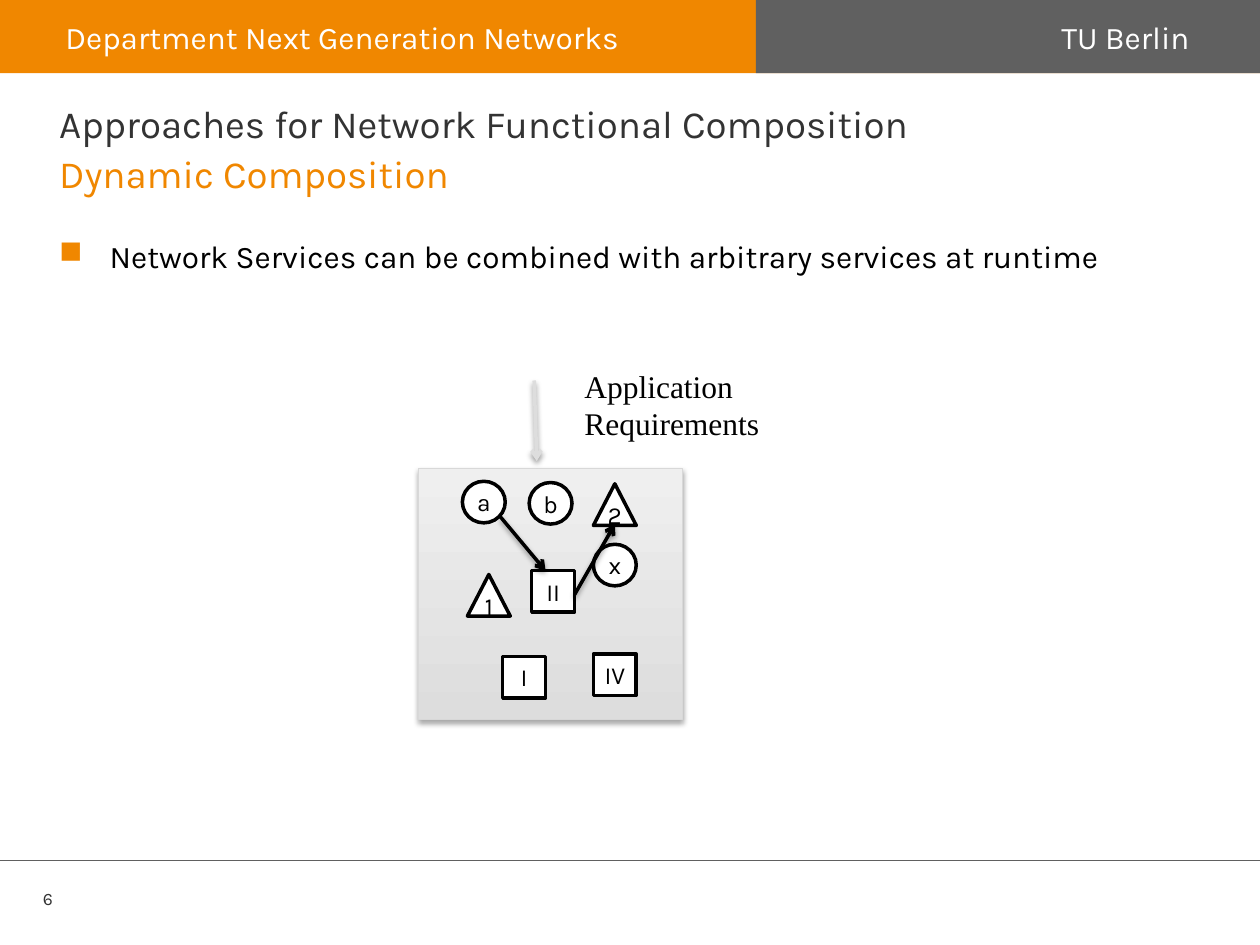
from lxml import etree
from pptx import Presentation
from pptx.dml.color import RGBColor
from pptx.enum.shapes import MSO_CONNECTOR, MSO_SHAPE
from pptx.enum.text import MSO_ANCHOR, MSO_AUTO_SIZE, PP_ALIGN
from pptx.oxml.ns import qn
from pptx.util import Inches, Pt

ORANGE = RGBColor(0xF0, 0x87, 0x00)
GREY = RGBColor(0x60, 0x60, 0x60)
DARK = RGBColor(0x33, 0x33, 0x33)
BLACK = RGBColor(0, 0, 0)
WHITE = RGBColor(0xFF, 0xFF, 0xFF)
PANEL_LOW = RGBColor(0xDD, 0xDD, 0xDD)
PANEL_HIGH = RGBColor(0xEF, 0xEF, 0xEF)
PANEL_EDGE = RGBColor(0xD8, 0xD8, 0xD8)

RECT = MSO_SHAPE.RECTANGLE
CIRCLE = MSO_SHAPE.OVAL
TRIANGLE = MSO_SHAPE.ISOSCELES_TRIANGLE
STRAIGHT = MSO_CONNECTOR.STRAIGHT
TOP, MIDDLE = MSO_ANCHOR.TOP, MSO_ANCHOR.MIDDLE
LEFT, CENTER, RIGHT = PP_ALIGN.LEFT, PP_ALIGN.CENTER, PP_ALIGN.RIGHT
NO_FIT = MSO_AUTO_SIZE.NONE

FONT = "Karla"
TEXT_LEFT, TEXT_WIDTH = 0.47, 9.06
SERVICE_SIZE = (0.34, 0.33)
SERVICES = [
    ("a", CIRCLE, 3.67, 3.82),
    ("x", CIRCLE, 4.71, 4.32),
    ("1", TRIANGLE, 3.71, 4.56),
    ("I", RECT, 3.99, 5.21),
    ("b", CIRCLE, 4.2, 3.83),
    ("II", RECT, 4.22, 4.53),
    ("2", TRIANGLE, 4.71, 3.84),
    ("IV", RECT, 4.71, 5.19),
]


def inches(*lengths):
    return [Inches(length) for length in lengths]


def write(frame, text, size=18, color=BLACK, font=FONT, align=LEFT,
          anchor=TOP, insets=(0.1, 0.05, 0.1, 0.05), bullet=None):
    """Fill a text frame with one formatted paragraph; insets run left, top, right, bottom."""
    frame.word_wrap = True
    frame.auto_size = NO_FIT
    frame.vertical_anchor = anchor
    (frame.margin_left, frame.margin_top,
     frame.margin_right, frame.margin_bottom) = inches(*insets)
    frame.text = text
    paragraph = frame.paragraphs[0]
    paragraph.alignment = align
    if bullet:
        add_bullet(paragraph, bullet)
    run_font = paragraph.runs[0].font
    run_font.name, run_font.size = font, Pt(size)
    run_font.color.rgb = color


def add_bullet(paragraph, symbol, indent=0.4):
    properties = paragraph._p.get_or_add_pPr()
    properties.set("marL", str(Inches(indent)))
    properties.set("indent", str(-Inches(indent)))
    color = etree.SubElement(properties, qn("a:buClr"))
    etree.SubElement(color, qn("a:srgbClr"), val=str(ORANGE))
    etree.SubElement(properties, qn("a:buChar"), char=symbol)


def add_text(slide, text, left, top, width, height, **text_format):
    box = slide.shapes.add_textbox(*inches(left, top, width, height))
    write(box.text_frame, text, **text_format)


def add_block(slide, preset, left, top, width, height, fill=None, line=None, weight=1):
    block = slide.shapes.add_shape(preset, *inches(left, top, width, height))
    block.shadow.inherit = False
    if fill is not None:
        block.fill.solid()
        block.fill.fore_color.rgb = fill
    if line is None:
        block.line.fill.background()
    else:
        block.line.color.rgb = line
        block.line.width = Pt(weight)
    return block


def add_line(slide, start, end, color, weight):
    line = slide.shapes.add_connector(STRAIGHT, *inches(*start, *end))
    line.line.color.rgb = color
    line.line.width = Pt(weight)
    effects = etree.SubElement(line._element.spPr, qn("a:effectLst"))
    return line, effects


def add_arrow(slide, start, end, color=BLACK):
    arrow, effects = add_line(slide, start, end, color, 2)
    etree.SubElement(arrow.line._get_or_add_ln(), qn("a:tailEnd"), type="arrow")
    add_drop_shadow(effects, opacity=38, distance=1.6)


def add_drop_shadow(effects, opacity, distance, blur=3.1):
    shadow = etree.SubElement(
        effects, qn("a:outerShdw"), blurRad=str(Pt(blur)), dist=str(Pt(distance)),
        dir="5400000", rotWithShape="0")
    color = etree.SubElement(shadow, qn("a:srgbClr"), val=str(BLACK))
    etree.SubElement(color, qn("a:alpha"), val=str(opacity * 1000))


def add_service_panel(slide):
    panel = add_block(slide, RECT, 3.32, 3.72, 2.1, 1.99, line=PANEL_EDGE, weight=0.75)
    panel.fill.gradient()
    panel.fill.gradient_angle = 90
    for stop, color in zip(panel.fill.gradient_stops, (PANEL_LOW, PANEL_HIGH)):
        stop.color.rgb = color
    effects = panel._element.spPr.find(qn("a:effectLst"))
    add_drop_shadow(effects, opacity=35, distance=1.8)


def add_service(slide, label, preset, left, top):
    service = add_block(slide, preset, left, top, *SERVICE_SIZE,
                        fill=WHITE, line=BLACK, weight=2)
    write(service.text_frame, label, size=14, align=CENTER, anchor=MIDDLE,
          insets=(0.01, 0.05, 0.01, 0.05))


def add_page_frame(slide):
    add_block(slide, RECT, 0, 0, 10, 0.58, fill=ORANGE)
    add_block(slide, RECT, 6, 0, 4, 0.58, fill=GREY)
    add_line(slide, (0, 6.83), (10, 6.83), GREY, 0.5)
    add_text(slide, "6", 0.34, 7.01, 4.52, 0.24, size=10, color=DARK,
             anchor=MIDDLE, insets=(0, 0, 0, 0))
    add_text(slide, "TU Berlin", 6.11, 0.09, 3.43, 0.4, color=WHITE, align=RIGHT)
    add_text(slide, "Department Next Generation Networks", 0.42, 0.09, 5.18, 0.4,
             color=WHITE)


def add_headings(slide):
    title = slide.shapes.title
    title.left, title.top, title.width, title.height = inches(
        TEXT_LEFT, 0.79, TEXT_WIDTH, 0.4)
    write(title.text_frame, "Approaches for Network Functional Composition",
          size=22, color=DARK, insets=(0, 0, 0.1, 0))
    add_text(slide, "Dynamic Composition", TEXT_LEFT, 1.19, TEXT_WIDTH, 0.43,
             size=22, color=ORANGE, insets=(0, 0, 0, 0))


def main():
    presentation = Presentation()
    presentation.slide_width, presentation.slide_height = inches(10, 7.5)
    slide = presentation.slides.add_slide(presentation.slide_layouts[5])

    add_page_frame(slide)
    add_headings(slide)
    add_text(slide, "Network Services can be combined with arbitrary services at runtime",
             TEXT_LEFT, 1.88, TEXT_WIDTH, 4.82, insets=(0, 0, 0, 0), bullet="■")

    add_service_panel(slide)
    add_arrow(slide, (4.24, 3.02), (4.26, 3.66), color=PANEL_LOW)
    add_text(slide, "Application Requirements", 4.54, 2.86, 1.94, 0.71,
             font="Times New Roman")
    for service in SERVICES:
        add_service(slide, *service)
    add_arrow(slide, (3.97, 4.1), (4.33, 4.53))
    add_arrow(slide, (4.56, 4.72), (4.88, 4.16))

    presentation.save("out.pptx")


if __name__ == "__main__":
    main()
